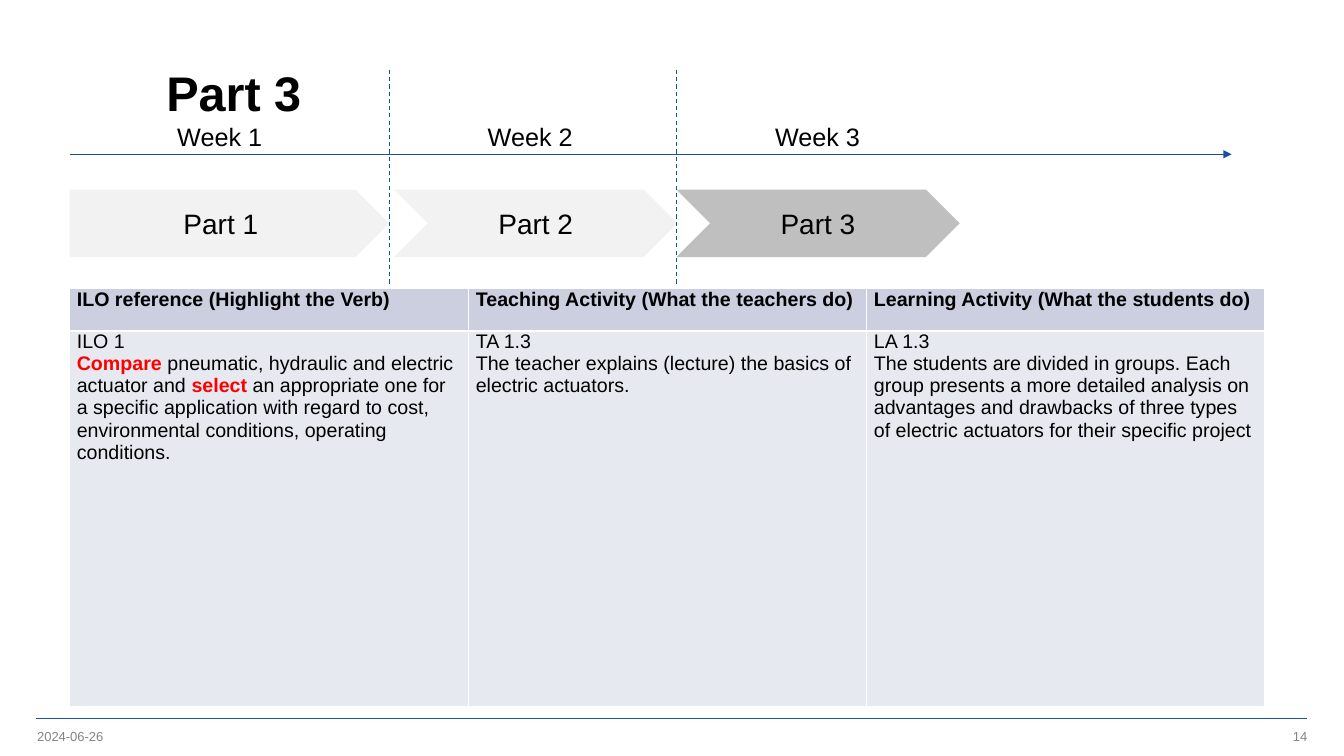
from lxml.etree import SubElement
from pptx import Presentation
from pptx.dml.color import RGBColor
from pptx.enum.dml import MSO_LINE
from pptx.enum.shapes import MSO_CONNECTOR, MSO_SHAPE
from pptx.enum.text import MSO_ANCHOR, MSO_AUTO_SIZE, PP_ALIGN
from pptx.oxml.ns import qn
from pptx.util import Pt

BLUE, BLACK, WHITE, RED = "1451A5", "000000", "FFFFFF", "FF0000"
LEFT = 49.7
ARROW_TOP, ARROW_HEIGHT = 135.4, 48.2
# Name, shape, left, width, fill and left of the week label
PARTS = [
    ("Part 1", MSO_SHAPE.PENTAGON, LEFT, 228.2, "F2F2F2", 119.5),
    ("Part 2", MSO_SHAPE.CHEVRON, 281.5, 202.3, "F2F2F2", 341.3),
    ("Part 3", MSO_SHAPE.CHEVRON, 483.1, 202.3, "BFBFBF", 546.5),
]
HEADINGS = [
    "ILO reference (Highlight the Verb)",
    "Teaching Activity (What the teachers do)",
    "Learning Activity (What the students do)",
]
VERB = {"bold": True, "color": RED}
# Each cell holds paragraphs, each paragraph holds (text, format) runs
ACTIVITIES = [
    [[("ILO 1", {})],
     [("Compare", VERB),
      (" pneumatic, hydraulic and electric actuator and ", {}),
      ("select", VERB),
      (" an appropriate one for a specific application with regard to cost, "
       "environmental conditions, operating conditions.", {})]],
    [[("TA 1.3", {})],
     [("The teacher explains (lecture) the basics of electric actuators.", {})]],
    [[("LA 1.3", {})],
     [("The students are divided in groups. Each group presents a more detailed "
       "analysis on advantages and drawbacks of three types of electric actuators "
       "for their specific project", {})]],
]


def hex_color(value):
    return RGBColor.from_string(value)


def set_attributes(target, values):
    for name, value in values.items():
        setattr(target, name, value)


def add_run(paragraph, text, size, color=BLACK, bold=False):
    run = paragraph.add_run()
    run.text = text
    set_attributes(run.font, {"name": "Arial", "size": Pt(size), "bold": bold})
    run.font.color.rgb = hex_color(color)


def set_frame(frame, margin_x, margin_y, anchor):
    set_attributes(frame, {
        "margin_left": Pt(margin_x), "margin_right": Pt(margin_x),
        "margin_top": Pt(margin_y), "margin_bottom": Pt(margin_y),
        "vertical_anchor": anchor, "word_wrap": True,
        "auto_size": MSO_AUTO_SIZE.NONE,
    })


def add_title(slide, text):
    title = slide.shapes.title
    set_attributes(title, {"left": Pt(111.6), "top": Pt(26.6),
                           "width": Pt(792.7), "height": Pt(70.6)})
    set_frame(title.text_frame, 7.2, 3.6, MSO_ANCHOR.MIDDLE)
    paragraph = title.text_frame.paragraphs[0]
    set_attributes(paragraph, {"alignment": PP_ALIGN.LEFT, "line_spacing": 1.18})
    add_run(paragraph, text, 34.7, bold=True)


def add_label(slide, text, box, size, color=BLACK, margins=(0, 0),
              anchor=MSO_ANCHOR.MIDDLE, alignment=PP_ALIGN.LEFT):
    label = slide.shapes.add_textbox(*map(Pt, box))
    set_frame(label.text_frame, *margins, anchor)
    paragraph = label.text_frame.paragraphs[0]
    paragraph.alignment = alignment
    add_run(paragraph, text, size, color)


def add_line(slide, ends, color=BLUE, width=0.75, dash=None, arrow=False):
    connector = slide.shapes.add_connector(MSO_CONNECTOR.STRAIGHT, *map(Pt, ends))
    connector.line.color.rgb = hex_color(color)
    connector.line.width = Pt(width)
    if dash:
        connector.line.dash_style = dash
    if arrow:
        SubElement(connector.line._get_or_add_ln(), qn("a:tailEnd"), type="triangle")
    SubElement(connector._element.spPr, qn("a:effectLst"))


def add_part(slide, name, kind, left, width, fill):
    part = slide.shapes.add_shape(kind, Pt(left), Pt(ARROW_TOP), Pt(width), Pt(ARROW_HEIGHT))
    part.shadow.inherit = False
    part.fill.solid()
    part.fill.fore_color.rgb = hex_color(fill)
    part.line.fill.background()
    set_frame(part.text_frame, 7.2, 3.6, MSO_ANCHOR.MIDDLE)
    paragraph = part.text_frame.paragraphs[0]
    paragraph.alignment = PP_ALIGN.CENTER
    add_run(paragraph, name, 20)


def fill_cell(cell, paragraphs, fill):
    set_attributes(cell, {"margin_left": Pt(5.2), "margin_right": Pt(5.2),
                          "margin_top": 0, "margin_bottom": 0})
    frame = cell.text_frame
    for index, runs in enumerate(paragraphs):
        paragraph = frame.add_paragraph() if index else frame.paragraphs[0]
        for text, style in runs:
            add_run(paragraph, text, 14, **style)
    # Borders come before the fill in the cell properties
    properties = cell._tc.get_or_add_tcPr()
    for side in ("lnL", "lnR", "lnT", "lnB"):
        border = SubElement(properties, qn(f"a:{side}"), w=str(Pt(1)))
        solid = SubElement(border, qn("a:solidFill"))
        SubElement(solid, qn("a:srgbClr"), val=WHITE)
    cell.fill.solid()
    cell.fill.fore_color.rgb = hex_color(fill)


def add_activity_table(slide):
    heights, widths = (30.4, 268.4), (285, 284.4, 284.4)
    table = slide.shapes.add_table(2, 3, Pt(LEFT), Pt(206.1),
                                   Pt(sum(widths)), Pt(sum(heights))).table
    for row, height in zip(table.rows, heights):
        row.height = Pt(height)
    for column, width in enumerate(widths):
        table.columns[column].width = Pt(width)
        heading = [[(HEADINGS[column], {"bold": True})]]
        fill_cell(table.cell(0, column), heading, "CBCFE0")
        fill_cell(table.cell(1, column), ACTIVITIES[column], "E7E9F0")


def main():
    presentation = Presentation()
    set_attributes(presentation, {"slide_width": Pt(960), "slide_height": Pt(540)})
    slide = presentation.slides.add_slide(presentation.slide_layouts[5])

    # Title and footer
    add_title(slide, "Part 3")
    add_line(slide, (26, 513.4, 933.8, 513.4), "1954A6", 1)
    add_label(slide, "2024-06-26", (26.6, 519.8, 216, 12.2), 9.3, "848489")
    add_label(slide, "14", (717.8, 519.8, 216, 12.2), 9.3, "848489",
              alignment=PP_ALIGN.RIGHT)

    # Timeline with weeks and parts
    add_line(slide, (LEFT, 110.2, 879.8, 110.2), arrow=True)
    for week, (name, kind, left, width, fill, label_left) in enumerate(PARTS, 1):
        add_part(slide, name, kind, left, width, fill)
        add_label(slide, f"Week {week}", (label_left, 83, 75.6, 28.8), 18,
                  margins=(7.2, 3.6), anchor=MSO_ANCHOR.TOP)
    for divider in (277.9, 483.1):
        add_line(slide, (divider, 50, divider, 204.5), dash=MSO_LINE.DASH)

    # Activities
    add_activity_table(slide)
    presentation.save("out.pptx")


if __name__ == "__main__":
    main()
